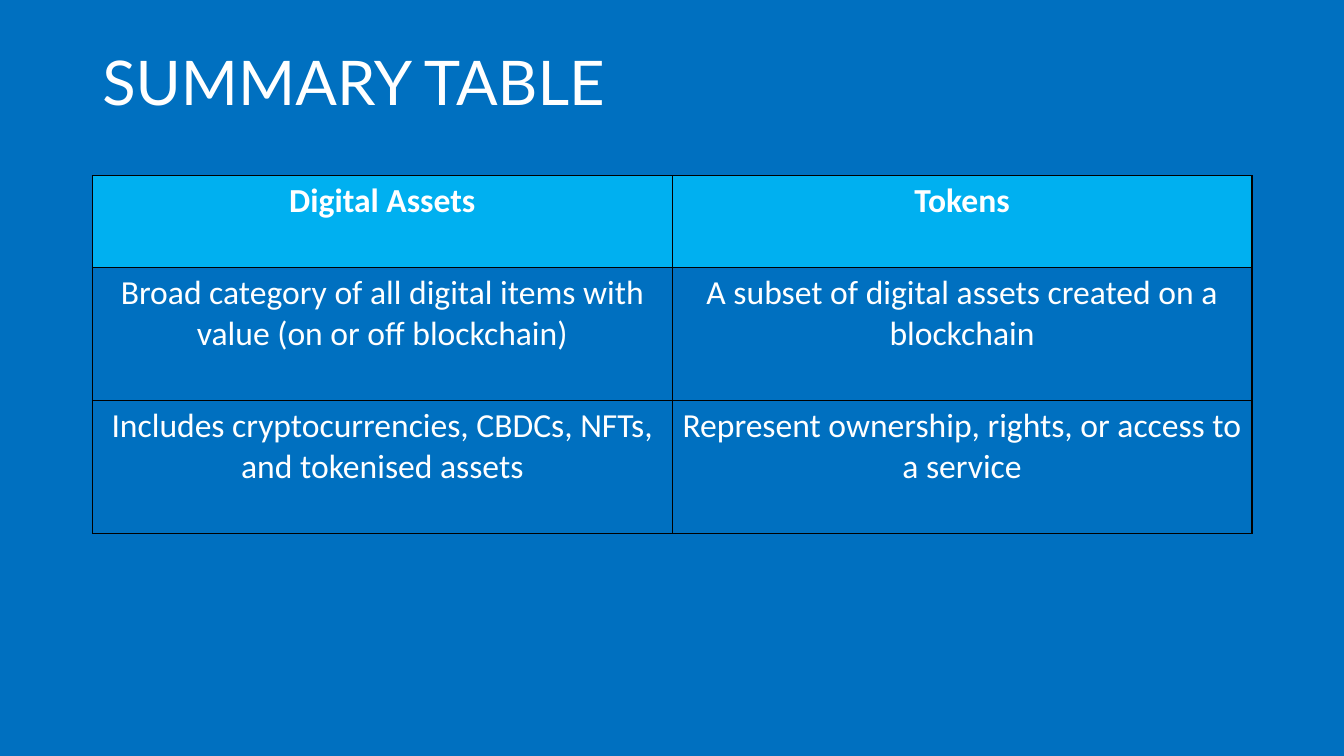
from lxml.etree import SubElement
from pptx import Presentation
from pptx.dml.color import RGBColor
from pptx.enum.text import MSO_ANCHOR, PP_ALIGN
from pptx.oxml.ns import qn
from pptx.util import Cm, Pt

BLUE = RGBColor(0x00, 0x70, 0xC0)
LIGHT_BLUE = RGBColor(0x00, 0xB0, 0xF0)
WHITE = RGBColor(0xFF, 0xFF, 0xFF)
BLACK = RGBColor(0x00, 0x00, 0x00)

LEFT = Cm(2.33)
COLUMN_WIDTH = Cm(14.61)
HEADER_HEIGHT = Cm(2.31)
BODY_HEIGHT = Cm(3.35)

SUMMARY = [
    ("Digital Assets", "Tokens"),
    ("Broad category of all digital items with value (on or off blockchain)",
     "A subset of digital assets created on a blockchain"),
    ("Includes cryptocurrencies, CBDCs, NFTs, and tokenised assets",
     "Represent ownership, rights, or access to a service"),
]


def style_font(font, name, size, bold=False):
    font.name = name
    font.size = Pt(size)
    font.bold = bold
    font.color.rgb = WHITE


def add_title(slide, text):
    shape = slide.shapes.add_textbox(LEFT, Cm(1.02), 2 * COLUMN_WIDTH, Cm(2.29))
    frame = shape.text_frame
    frame.word_wrap = True
    frame.vertical_anchor = MSO_ANCHOR.MIDDLE
    paragraph = frame.paragraphs[0]
    paragraph.text = text
    paragraph.line_spacing = 0.9
    style_font(paragraph.font, "Lato", 44)


def add_borders(cell):
    properties = cell._tc.get_or_add_tcPr()
    for side in ("a:lnL", "a:lnR", "a:lnT", "a:lnB"):
        line = SubElement(properties, qn(side), w=str(Pt(1)))
        fill = SubElement(line, qn("a:solidFill"))
        SubElement(fill, qn("a:srgbClr"), val=str(BLACK))


def fill_cell(cell, text, is_header):
    add_borders(cell)
    if is_header:
        cell.fill.solid()
        cell.fill.fore_color.rgb = LIGHT_BLUE
    else:
        cell.fill.background()
    cell.vertical_anchor = MSO_ANCHOR.TOP
    paragraph = cell.text_frame.paragraphs[0]
    paragraph.text = text
    paragraph.alignment = PP_ALIGN.CENTER
    style_font(paragraph.font, "Calibri", 24, is_header)


def add_summary_table(slide, rows):
    height = HEADER_HEIGHT + BODY_HEIGHT * (len(rows) - 1)
    shape = slide.shapes.add_table(
        len(rows), len(rows[0]), LEFT, Cm(4.43), COLUMN_WIDTH * len(rows[0]), height)
    table = shape.table
    table.horz_banding = False
    for column in table.columns:
        column.width = COLUMN_WIDTH
    for row_index, texts in enumerate(rows):
        is_header = row_index == 0
        table.rows[row_index].height = HEADER_HEIGHT if is_header else BODY_HEIGHT
        for column_index, text in enumerate(texts):
            fill_cell(table.cell(row_index, column_index), text, is_header)


def main():
    presentation = Presentation()
    presentation.slide_width = Cm(33.87)
    presentation.slide_height = Cm(19.05)
    slide = presentation.slides.add_slide(presentation.slide_layouts[6])
    slide.background.fill.solid()
    slide.background.fill.fore_color.rgb = BLUE
    add_title(slide, "SUMMARY TABLE")
    add_summary_table(slide, SUMMARY)
    presentation.save("out.pptx")


if __name__ == "__main__":
    main()
